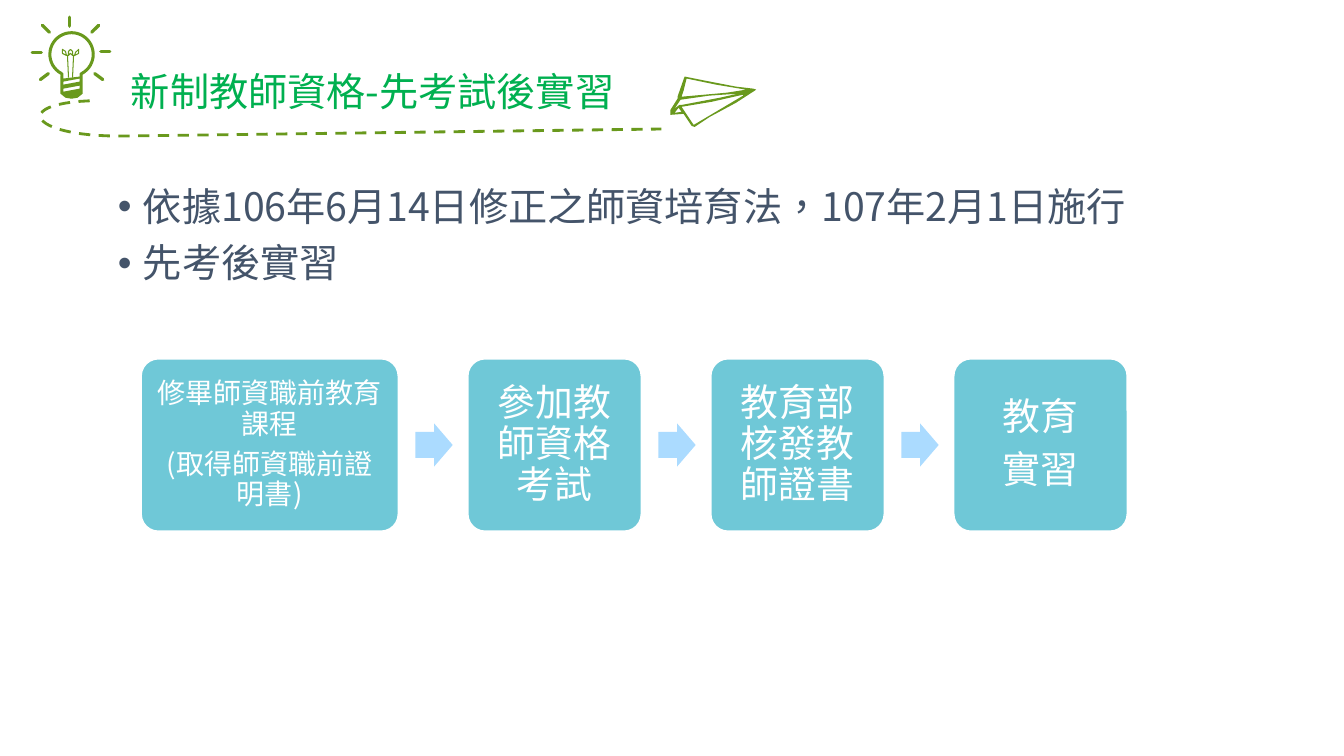
from math import cos, radians, sin

from lxml.etree import SubElement
from pptx import Presentation
from pptx.dml.color import RGBColor
from pptx.enum.dml import MSO_LINE
from pptx.enum.shapes import MSO_CONNECTOR, MSO_SHAPE
from pptx.enum.text import MSO_ANCHOR, PP_ALIGN
from pptx.oxml.ns import qn
from pptx.util import Inches, Pt

OLIVE = RGBColor(0x69, 0x99, 0x1D)
GREEN = RGBColor(0x00, 0xB0, 0x50)
SLATE = RGBColor(0x44, 0x54, 0x6A)
TEAL = RGBColor(0x6F, 0xC8, 0xD7)
SKY = RGBColor(0xAB, 0xDB, 0xFF)
WHITE = RGBColor(0xFF, 0xFF, 0xFF)
SANS_SC = "Noto Sans CJK SC"
SANS_JP = "Noto Sans CJK JP"

COLS, ROWS = 1333, 750
CELL = Inches(0.01)

prs = Presentation()
prs.slide_width = COLS * CELL
prs.slide_height = ROWS * CELL
s = prs.slides.add_slide(prs.slide_layouts[6])


def draw_outline(contours, fill=None, width=None, close=True):
    builder = None
    for contour in contours:
        points = [(x * CELL, y * CELL) for x, y in contour]
        if builder is None:
            builder = s.shapes.build_freeform(*points[0], scale=1.0)
        else:
            builder.move_to(*points[0])
        builder.add_line_segments(points[1:], close=close)
    sp = builder.convert_to_shape()
    sp.shadow.inherit = False
    if fill:
        sp.fill.solid()
        sp.fill.fore_color.rgb = fill
    else:
        sp.fill.background()
    if width:
        sp.line.color.rgb = OLIVE
        sp.line.width = Pt(width)
    else:
        sp.line.fill.background()
    return sp


def write_text(tf, lines, size, font, color, align=PP_ALIGN.LEFT):
    tf.word_wrap = True
    tf.text = "\n".join(lines)
    for p in tf.paragraphs:
        p.alignment = align
        p.line_spacing = 0.9
        for r in p.runs:
            r.font.size = Pt(size)
            r.font.name = font
            r.font.color.rgb = color
            rPr = r.font._element
            rPr.set("lang", "zh-TW")
            SubElement(rPr, qn("a:ea")).set("typeface", font)


# layout
glass = [(cos(radians(a)), sin(radians(a))) for a in range(118, 423, 8)]
bulb = [(71 + 23 * x, 54 + 23 * y) for x, y in glass]
bulb += [(82, 75), (82, 93), (77, 97), (71, 98), (65, 97), (60, 93), (60, 75)]
window = [(71 + 20 * x, 54 + 20 * y) for x, y in glass]
window += [(79, 73), (79, 76), (63, 78), (63, 73)]
stripes = [[(63, y + 3), (79, y), (79, y - 3), (63, y)] for y in (81, 88)]
draw_outline([bulb, window, *stripes], fill=OLIVE)

loops = [(62, 49), (62, 53), (66, 55), (68, 55), (70, 53), (72, 55), (74, 55),
         (78, 53), (78, 49), (75, 52), (74, 55), (72, 55), (72, 51), (70, 49),
         (68, 51), (68, 55), (66, 55), (65, 51), (62, 49)]
draw_outline([loops, [(67, 55), (68, 77)], [(73, 55), (72, 77)]], width=0.75, close=False)

for x1, y1, x2, y2 in [(100, 51, 109, 51), (69, 17, 69, 26), (32, 52, 41, 52),
                       (40, 79, 48, 73), (94, 73, 102, 79),
                       (42, 25, 49, 32), (91, 32, 98, 25)]:
    ray = s.shapes.add_connector(MSO_CONNECTOR.STRAIGHT, x1 * CELL, y1 * CELL, x2 * CELL, y2 * CELL)
    ray.line.color.rgb = OLIVE
    ray.line.width = Pt(2.3)
    ray.line._ln.set("cap", "rnd")
    SubElement(ray._element.spPr, qn("a:effectLst"))

steps = [i / 24 for i in range(25)]
trail = [tuple((1 - t) ** 3 * a + 3 * (1 - t) ** 2 * t * b + 3 * (1 - t) * t ** 2 * c + t ** 3 * d
               for a, b, c, d in [(89, 12, 29, 118), (100, 103, 135, 135)])
         for t in steps]
flight = draw_outline([trail + [(656, 128)]], width=2, close=False)
flight.line.dash_style = MSO_LINE.DASH

plane = [
    [(750, 89), (744, 93), (730, 102), (704, 116), (689, 126), (686, 125), (678, 113),
     (665, 114), (665, 109), (672, 98), (672, 96), (679, 76), (699, 80), (730, 86), (747, 88)],
    [(681, 78), (678, 90), (676, 96), (721, 92), (740, 89), (710, 84)],
    [(676, 106), (688, 124), (737, 95), (737, 94), (706, 101)],
    [(675, 99), (669, 108), (674, 104), (677, 104), (714, 97), (732, 93), (703, 95)],
    [(669, 112), (676, 111), (673, 107)],
]
draw_outline(plane, fill=OLIVE)

body = s.shapes.add_textbox(107 * CELL, 181 * CELL, 1100 * CELL, 455 * CELL)
write_text(body.text_frame, ["依據106年6月14日修正之師資培育法，107年2月1日施行", "先考後實習"],
           28, SANS_SC, SLATE)
for p in body.text_frame.paragraphs:
    pPr = p._p.get_or_add_pPr()
    pPr.set("marL", str(25 * CELL))
    pPr.set("indent", str(-25 * CELL))
    SubElement(pPr, qn("a:buFont")).set("typeface", "Arial")
    SubElement(pPr, qn("a:buChar")).set("char", "•")
body.text_frame.paragraphs[1].space_before = Pt(10)

title = s.shapes.add_textbox(120 * CELL, 54 * CELL, 544 * CELL, 78 * CELL)
title.text_frame.vertical_anchor = MSO_ANCHOR.MIDDLE
write_text(title.text_frame, ["新制教師資格-先考試後實習"], 28, SANS_JP, GREEN)

TOP, HEIGHT, GAP = 356, 171, 69
ARROW_W, ARROW_H = 37, 43
stages = [
    (255, 20, 8, ["修畢師資職前教育課程", "(取得師資職前證明書)"]),
    (172, 27, 11, ["參加教師資格考試"]),
    (172, 27, 11, ["教育部核發教師證書"]),
    (172, 27, 11, ["教育", "實習"]),
]
left = 140
for i, (width, size, inset, lines) in enumerate(stages):
    if i:
        arrow = s.shapes.add_shape(MSO_SHAPE.RIGHT_ARROW, (left - 52) * CELL,
                                   int((TOP + (HEIGHT - ARROW_H) / 2) * CELL),
                                   ARROW_W * CELL, ARROW_H * CELL)
        arrow.adjustments[0] = 0.6
        arrow.adjustments[1] = 0.5
        arrow.shadow.inherit = False
        arrow.fill.solid()
        arrow.fill.fore_color.rgb = SKY
        arrow.line.fill.background()
    card = s.shapes.add_shape(MSO_SHAPE.ROUNDED_RECTANGLE, left * CELL, TOP * CELL,
                              width * CELL, HEIGHT * CELL)
    card.adjustments[0] = 0.1
    card.shadow.inherit = False
    card.fill.solid()
    card.fill.fore_color.rgb = TEAL
    card.line.color.rgb = WHITE
    card.line.width = Pt(1)
    tf = card.text_frame
    tf.margin_left = tf.margin_right = tf.margin_top = tf.margin_bottom = inset * CELL
    tf.vertical_anchor = MSO_ANCHOR.MIDDLE
    write_text(tf, lines, size, SANS_SC, WHITE, PP_ALIGN.CENTER)
    for p in tf.paragraphs:
        p.space_after = Pt(round(size * 0.35))
    left += width + GAP

prs.save("out.pptx")
